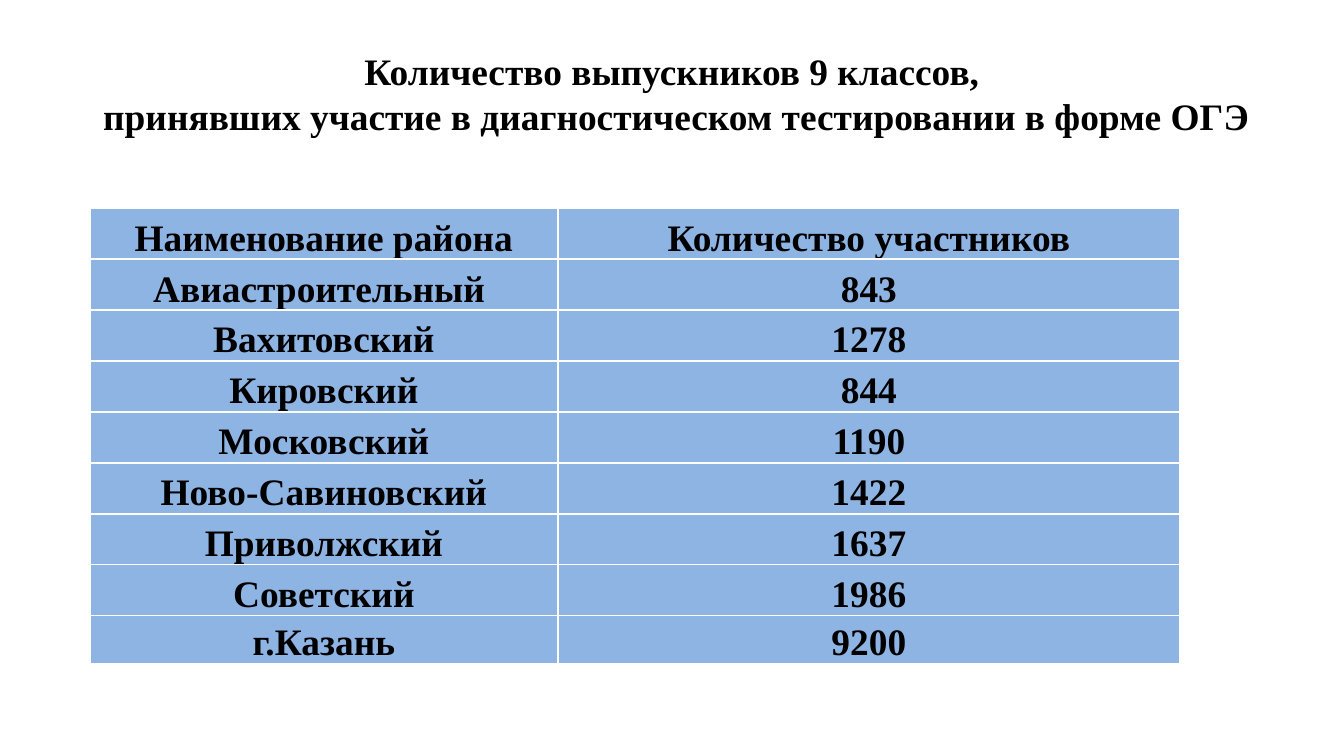
from lxml import etree
from pptx import Presentation
from pptx.dml.color import RGBColor
from pptx.enum.shapes import MSO_SHAPE
from pptx.enum.text import MSO_ANCHOR, PP_ALIGN
from pptx.oxml.ns import qn
from pptx.util import Inches, Pt

RECTANGLE = MSO_SHAPE.RECTANGLE
MIDDLE, BOTTOM = MSO_ANCHOR.MIDDLE, MSO_ANCHOR.BOTTOM
CENTER = PP_ALIGN.CENTER

COLORS = {"paper": "FFFFFF", "ink": "000000", "cell": "8EB4E3"}
FONT = "Times New Roman"
TEXT_SIZE = Pt(20)

DISTRICTS = [
    ("Наименование района", "Количество участников"),
    ("Авиастроительный ", "843"),
    ("Вахитовский", "1278"),
    ("Кировский", "844"),
    ("Московский", "1190"),
    ("Ново-Савиновский", "1422"),
    ("Приволжский", "1637"),
    ("Советский", "1986"),
    ("г.Казань", "9200"),
]
COLUMN_WIDTHS = [Inches(3.48), Inches(4.63)]
TABLE_HEIGHT = Inches(3.39)
LAST_ROW_HEIGHT = Inches(0.36)
ROW_HEIGHT = (TABLE_HEIGHT - LAST_ROW_HEIGHT) // (len(DISTRICTS) - 1)
ROW_HEIGHTS = [ROW_HEIGHT] * (len(DISTRICTS) - 1) + [LAST_ROW_HEIGHT]


def add_text(paragraph, text):
    paragraph.alignment = CENTER
    run = paragraph.add_run()
    run.text = text
    run.font.name = FONT
    run.font.size = TEXT_SIZE
    run.font.bold = True
    run.font.color.rgb = RGBColor.from_string(COLORS["ink"])


def add_borders(cell):
    properties = cell._tc.get_or_add_tcPr()
    for position, side in enumerate(("a:lnL", "a:lnR", "a:lnT", "a:lnB")):
        border = etree.Element(qn(side), w=str(Pt(1)))
        fill = etree.SubElement(border, qn("a:solidFill"))
        etree.SubElement(fill, qn("a:srgbClr"), val=COLORS["paper"])
        properties.insert(position, border)


prs = Presentation()
prs.slide_width = Inches(10)
prs.slide_height = prs.slide_width * 9 // 16
slide = prs.slides.add_slide(prs.slide_layouts[6])

margin = prs.slide_width // 20
heading = slide.shapes.add_shape(
    RECTANGLE, margin, prs.slide_height // 25,
    prs.slide_width - 2 * margin, prs.slide_height // 6,
)
heading.shadow.inherit = False
heading.fill.solid()
heading.fill.fore_color.rgb = RGBColor.from_string(COLORS["paper"])
heading.line.fill.background()
heading.text_frame.word_wrap = True
heading.text_frame.vertical_anchor = MIDDLE
heading_paragraph = heading.text_frame.paragraphs[0]
add_text(heading_paragraph, "Количество выпускников 9 классов,")
heading_paragraph.add_line_break()
add_text(heading_paragraph, " принявших участие в диагностическом тестировании в форме ОГЭ")

participants = slide.shapes.add_table(
    len(DISTRICTS), len(COLUMN_WIDTHS), Inches(0.67), Inches(1.55),
    sum(COLUMN_WIDTHS), TABLE_HEIGHT,
).table
for column, width in zip(participants.columns, COLUMN_WIDTHS):
    column.width = width
for row, height, district in zip(participants.rows, ROW_HEIGHTS, DISTRICTS):
    row.height = height
    for cell, text in zip(row.cells, district):
        cell.fill.solid()
        cell.fill.fore_color.rgb = RGBColor.from_string(COLORS["cell"])
        cell.vertical_anchor = BOTTOM
        cell.margin_left = cell.margin_right = Inches(0.07)
        cell.margin_top = cell.margin_bottom = 0
        add_text(cell.text_frame.paragraphs[0], text)
        add_borders(cell)

prs.save("out.pptx")
